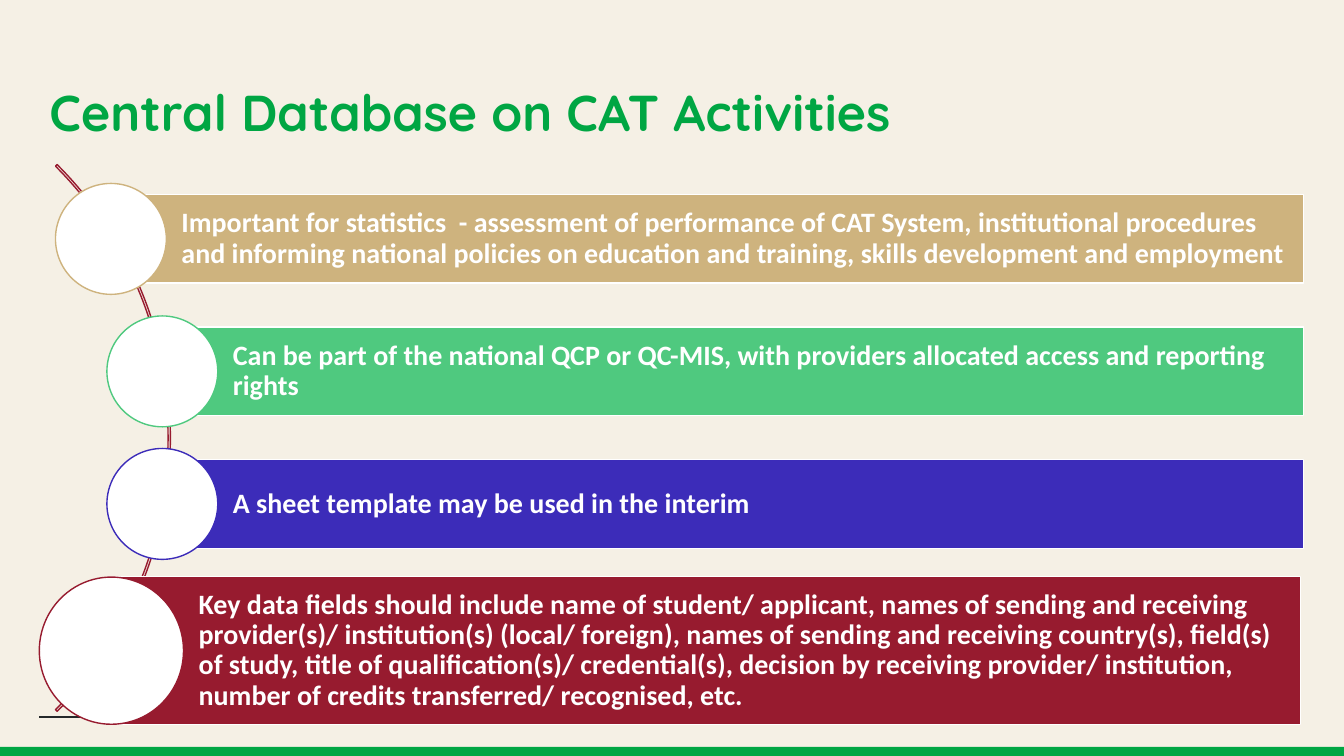
from dataclasses import dataclass

from lxml import etree
from pptx import Presentation
from pptx.dml.color import RGBColor
from pptx.enum.shapes import MSO_CONNECTOR, MSO_SHAPE
from pptx.enum.text import MSO_ANCHOR, MSO_AUTO_SIZE, PP_ALIGN
from pptx.oxml.ns import qn
from pptx.util import Inches, Pt

RECT, OVAL, ARC = MSO_SHAPE.RECTANGLE, MSO_SHAPE.OVAL, MSO_SHAPE.BLOCK_ARC
STRAIGHT = MSO_CONNECTOR.STRAIGHT
MIDDLE, LEFT = MSO_ANCHOR.MIDDLE, PP_ALIGN.LEFT
NO_AUTOFIT = MSO_AUTO_SIZE.NONE

SLIDE_W, SLIDE_H = Inches(13.33), Inches(7.5)
COLORS = {
    "background": "F5F0E5",
    "brand_green": "00A643",
    "ink": "24282A",
    "white": "FFFFFF",
    "sand": "CEB37E",
    "mint": "4FC97F",
    "indigo": "3C2CB9",
    "crimson": "971B2F",
}
MARGIN = 2.93
FIRST_ROW, ROW_PITCH, ROW_H = 25.73, 17.53, 11.73
RIGHT_EDGE = 97.0
OUTER_X, INNER_X = 8.25, 12.08


@dataclass
class Item:
    text: str
    color: str
    left: float
    top: float
    right: float = RIGHT_EDGE
    height: float = ROW_H
    dot_w: float = 8.25
    dot_h: float = 14.67
    dot_shift: float = 0
    indent: float = 0


ITEMS = [
    Item("Important for statistics  - assessment of performance of CAT System, "
         "institutional procedures and informing national policies on education "
         "and training, skills development and employment",
         "sand", OUTER_X, FIRST_ROW),
    Item("Can be part of the national QCP or QC-MIS, with providers allocated "
         "access and reporting rights",
         "mint", INNER_X, FIRST_ROW + ROW_PITCH),
    Item("A sheet template may be used in the interim",
         "indigo", INNER_X, FIRST_ROW + 2 * ROW_PITCH),
    Item("Key data fields should include name of student/ applicant, names of "
         "sending and receiving provider(s)/ institution(s) (local/ foreign), "
         "names of sending and receiving country(s), field(s) of study, title of "
         "qualification(s)/ credential(s), decision by receiving provider/ "
         "institution, number of credits transferred/ recognised, etc.",
         "crimson", 8.03, 76.27, right=96.78, height=19.6,
         dot_w=10.73, dot_h=19.47, dot_shift=0.26, indent=0.2),
]


def px(share: float) -> int:
    return round(SLIDE_W * share / 100)


def py(share: float) -> int:
    return round(SLIDE_H * share / 100)


def rgb(name: str) -> RGBColor:
    return RGBColor.from_string(COLORS[name])


def add_shape(slide, kind, left: float, top: float, width: float, height: float,
              fill: str | None = None, line: str | None = None):
    sp = slide.shapes.add_shape(kind, px(left), py(top), px(width), py(height))
    sp.shadow.inherit = False
    if fill:
        sp.fill.solid()
        sp.fill.fore_color.rgb = rgb(fill)
    else:
        sp.fill.background()
    if line:
        sp.line.color.rgb = rgb(line)
        sp.line.width = Pt(1)
    else:
        sp.line.fill.background()
    return sp


def write_text(sp, text: str, *, font: str, size: float, color: str,
               indent: float = 0) -> None:
    tf = sp.text_frame
    tf.word_wrap = True
    tf.auto_size = NO_AUTOFIT
    tf.vertical_anchor = MIDDLE
    p = tf.paragraphs[0]
    p.alignment = LEFT
    p.line_spacing = 0.9
    if indent:
        p._p.get_or_add_pPr().set("marL", str(Inches(indent)))
    r = p.add_run()
    r.text = text
    r.font.name = font
    r.font.size = Pt(size)
    r.font.bold = True
    r.font.color.rgb = rgb(color)


def add_rule(slide, left: float, right: float, y: float) -> None:
    rule = slide.shapes.add_connector(STRAIGHT, px(left), py(y), px(right), py(y))
    rule.line.color.rgb = rgb("ink")
    rule.line.width = Pt(1.5)
    etree.SubElement(rule._element.spPr, qn("a:effectLst"))


def add_item(slide, item: Item) -> None:
    bar = add_shape(slide, RECT, item.left, item.top, item.right - item.left,
                    item.height, item.color, "white")
    tf = bar.text_frame
    tf.margin_left = Inches(0.7)
    tf.margin_top = tf.margin_right = tf.margin_bottom = Inches(0.06)
    write_text(bar, item.text, font="Calibri", size=20, color="white",
               indent=item.indent)
    add_shape(slide, OVAL, item.left + item.dot_shift - item.dot_w / 2,
              item.top + (item.height - item.dot_h) / 2,
              item.dot_w, item.dot_h, "white", item.color)


def main() -> None:
    prs = Presentation()
    prs.slide_width, prs.slide_height = SLIDE_W, SLIDE_H
    slide = prs.slides.add_slide(prs.slide_layouts[5])
    slide.background.fill.solid()
    slide.background.fill.fore_color.rgb = rgb("background")

    title = slide.shapes.title
    title.left, title.top = px(MARGIN), py(10.53)
    title.width, title.height = px(94.15), py(9.33)
    write_text(title, "Central Database on CAT Activities",
               font="Quicksand", size=36, color="brand_green")

    add_shape(slide, RECT, -0.22, 98.8, 100.53, 1.73, "brand_green")
    add_rule(slide, MARGIN, 31.81, 94.8)

    arc = add_shape(slide, ARC, -44.86, 6.8, 57.54, 102.27, line="crimson")
    for i, value in enumerate((189, 27, 0.003)):
        arc.adjustments[i] = value

    for item in ITEMS:
        add_item(slide, item)

    prs.save("out.pptx")


if __name__ == "__main__":
    main()
